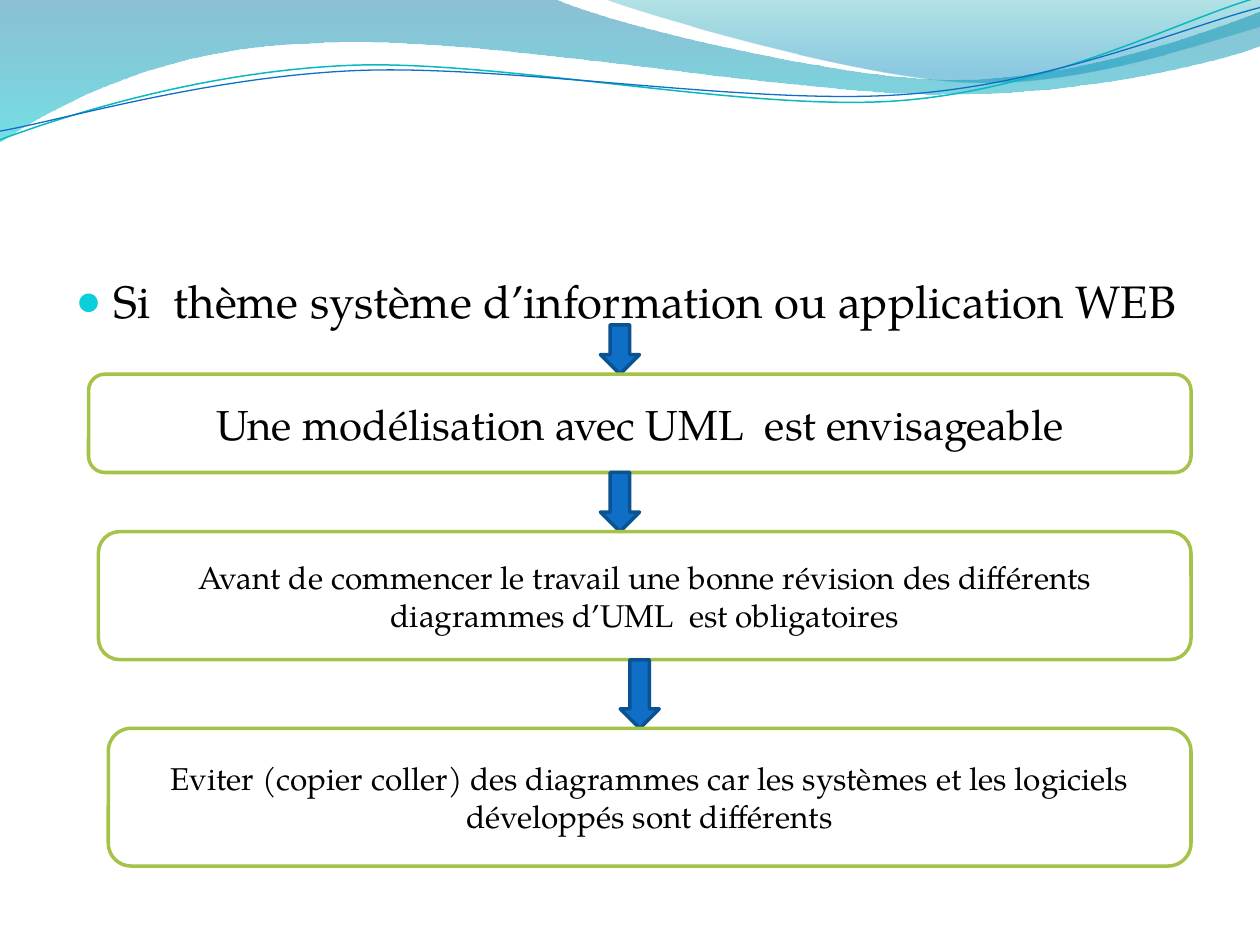
from lxml.etree import SubElement
from pptx import Presentation
from pptx.dml.color import RGBColor
from pptx.enum.shapes import MSO_SHAPE
from pptx.enum.text import MSO_ANCHOR, PP_ALIGN
from pptx.oxml.ns import qn
from pptx.util import Pt

FONT = "TeX Gyre Pagella"
COLOURS = {
    "text": "000000", "box": "FFFFFF", "box_line": "A5C249",
    "arrow": "0F6FC6", "arrow_line": "0B5292", "bullet": "0BD0D9",
    "teal_line": "0AB8BF", "blue_line": "0F6FC6",
    "wave_top": "0074A1", "wave_bottom": "00C6CF",
    "crest_top": "00A1A9", "crest_bottom": "008BBF",
}

# Outlines in points: a step of one point is straight, of three a Bézier curve.
WAVE = [[(0, 0)], [(316.8, -0.7)],
        [(342.7, 12.2), (478.1, 45.4), (545.8, 45.4)],
        [(614.2, 45.4), (689.8, 18.7), (720, 6.5)], [(720.7, 25.9)],
        [(707.8, 31.7), (626.4, 54.7), (537.1, 54)],
        [(447.8, 54), (275, 20.2), (185, 24.5)],
        [(92.9, 25.9), (33.1, 59.8), (-0.7, 81.4)], [(0, 0)]]
CREST = [[(344.9, -0.7)],
         [(366.5, 7.9), (491, 44.6), (553.7, 46.8)],
         [(616.3, 49.7), (691.9, 23), (720, 15.1)],
         [(720, 0)], [(344.9, -0.7)]]
TEAL_CURVE = [[(0, 79.9)],
              [(34.6, 67), (113.8, 41), (199.4, 37.4)],
              [(284.4, 33.8), (427, 64.1), (513.4, 57.6)],
              [(599.8, 51.1), (675.4, 10.8), (718.6, -1.4)]]
BLUE_CURVE = [[(0, 74.9)],
              [(33.8, 69.1), (118.1, 43.9), (203.8, 40.3)],
              [(290.2, 36.7), (429.8, 60.5), (516.2, 54)],
              [(601.9, 48.2), (677.5, 15.1), (720, 4.3)]]

BOX_RIGHT = 680.6
ARROW_WIDTH = 22.3
FIRST_ARROW_TOP = 185.6
# Box left, top, height, text size, left of the arrow above, text
STEPS = [
    (50.6, 213.8, 56.2, 24, 343.1, "Une modélisation avec UML  est envisageable"),
    (56.2, 303.8, 73.2, 18, 343.1,
     "Avant de commencer le travail une bonne révision des différents "
     "diagrammes d’UML  est obligatoires"),
    (61.9, 416.2, 78.7, 18, 354.4,
     "Eviter (copier coller) des diagrammes car les systèmes et les logiciels "
     "développés sont différents"),
]


def colour(name):
    return RGBColor.from_string(COLOURS[name])


def set_attributes(target, values):
    for name, value in values.items():
        setattr(target, name, value)


def set_line(shape, name, width):
    shape.line.color.rgb = colour(name)
    shape.line.width = Pt(width)


def write(paragraph, text, size):
    run = paragraph.add_run()
    run.text = text
    set_attributes(run.font, {"name": FONT, "size": Pt(size)})
    run.font.color.rgb = colour("text")


def add_outline(slide, outline, close):
    """Draw all points as straight steps, then join each three into a curve."""
    points = [(Pt(x), Pt(y)) for step in outline for x, y in step]
    builder = slide.shapes.build_freeform(*points[0])
    builder.add_line_segments(points[1:], close=close)
    shape = builder.convert_to_shape()
    shape.shadow.inherit = False
    segments = iter(list(shape.element.iter(qn("a:lnTo"))))
    for step in outline[1:]:
        first, *others = [next(segments) for _ in step]
        if others:
            curve = first.makeelement(qn("a:cubicBezTo"))
            first.addprevious(curve)
            for segment in (first, *others):
                curve.append(segment[0])
                segment.getparent().remove(segment)
    return shape


def add_wave(slide, outline, stops):
    """Fill an outline from top to bottom; stops are position, colour, opacity."""
    shape = add_outline(slide, outline, close=True)
    shape.line.fill.background()
    shape.fill.gradient()
    shape.fill.gradient_angle = 270
    for stop, (position, name, _) in zip(shape.fill.gradient_stops, stops):
        stop.position = position
        stop.color.rgb = colour(name)
    fills = shape.element.spPr.find(qn("a:gradFill")).iter(qn("a:srgbClr"))
    for element, (_, _, opacity) in zip(fills, stops):
        SubElement(element, qn("a:alpha"), val=str(opacity * 1000))


def add_curve(slide, outline, name, width):
    shape = add_outline(slide, outline, close=False)
    shape.fill.background()
    set_line(shape, name, width)


def fill_body(slide, text):
    """Place the bulleted line in front of the waves."""
    body = slide.placeholders[1]
    body.element.getparent().append(body.element)
    set_attributes(body, {"left": Pt(36), "top": Pt(152.6),
                          "width": Pt(648), "height": Pt(345.6)})
    paragraph = body.text_frame.paragraphs[0]
    write(paragraph, text, 26)
    properties = paragraph._p.get_or_add_pPr()
    properties.set("marL", str(Pt(21.6)))
    properties.set("indent", str(-Pt(21.6)))
    bullet_colour = SubElement(properties, qn("a:buClr"))
    SubElement(bullet_colour, qn("a:srgbClr"), val=COLOURS["bullet"])
    SubElement(properties, qn("a:buSzPct"), val="95000")
    SubElement(properties, qn("a:buChar"), char="●")


def add_block(slide, kind, left, top, width, height, name):
    shape = slide.shapes.add_shape(kind, Pt(left), Pt(top), Pt(width), Pt(height))
    shape.shadow.inherit = False
    shape.fill.solid()
    shape.fill.fore_color.rgb = colour(name)
    set_line(shape, name + "_line", 2)
    return shape


def add_box(slide, left, top, height, size, text):
    box = add_block(slide, MSO_SHAPE.ROUNDED_RECTANGLE, left, top,
                    BOX_RIGHT - left, height, "box")
    set_attributes(box.text_frame, {"word_wrap": True,
                                    "vertical_anchor": MSO_ANCHOR.MIDDLE})
    paragraph = box.text_frame.paragraphs[0]
    paragraph.alignment = PP_ALIGN.CENTER
    write(paragraph, text, size)


def main():
    presentation = Presentation()
    set_attributes(presentation, {"slide_width": Pt(720), "slide_height": Pt(540)})
    slide = presentation.slides.add_slide(presentation.slide_layouts[1])
    title = slide.shapes.title.element
    title.getparent().remove(title)

    add_wave(slide, WAVE, [(0, "wave_top", 45), (1, "wave_bottom", 55)])
    add_wave(slide, CREST, [(0, "crest_top", 30), (0.8, "crest_bottom", 45)])
    add_curve(slide, TEAL_CURVE, "teal_line", 0.85)
    add_curve(slide, BLUE_CURVE, "blue_line", 0.75)
    fill_body(slide, "Si  thème système d’information ou application WEB")

    arrow_top = FIRST_ARROW_TOP
    for left, top, height, size, arrow_left, text in STEPS:
        add_block(slide, MSO_SHAPE.DOWN_ARROW, arrow_left, arrow_top,
                  ARROW_WIDTH, top - arrow_top, "arrow")
        add_box(slide, left, top, height, size, text)
        arrow_top = top + height

    presentation.save("out.pptx")


if __name__ == "__main__":
    main()
